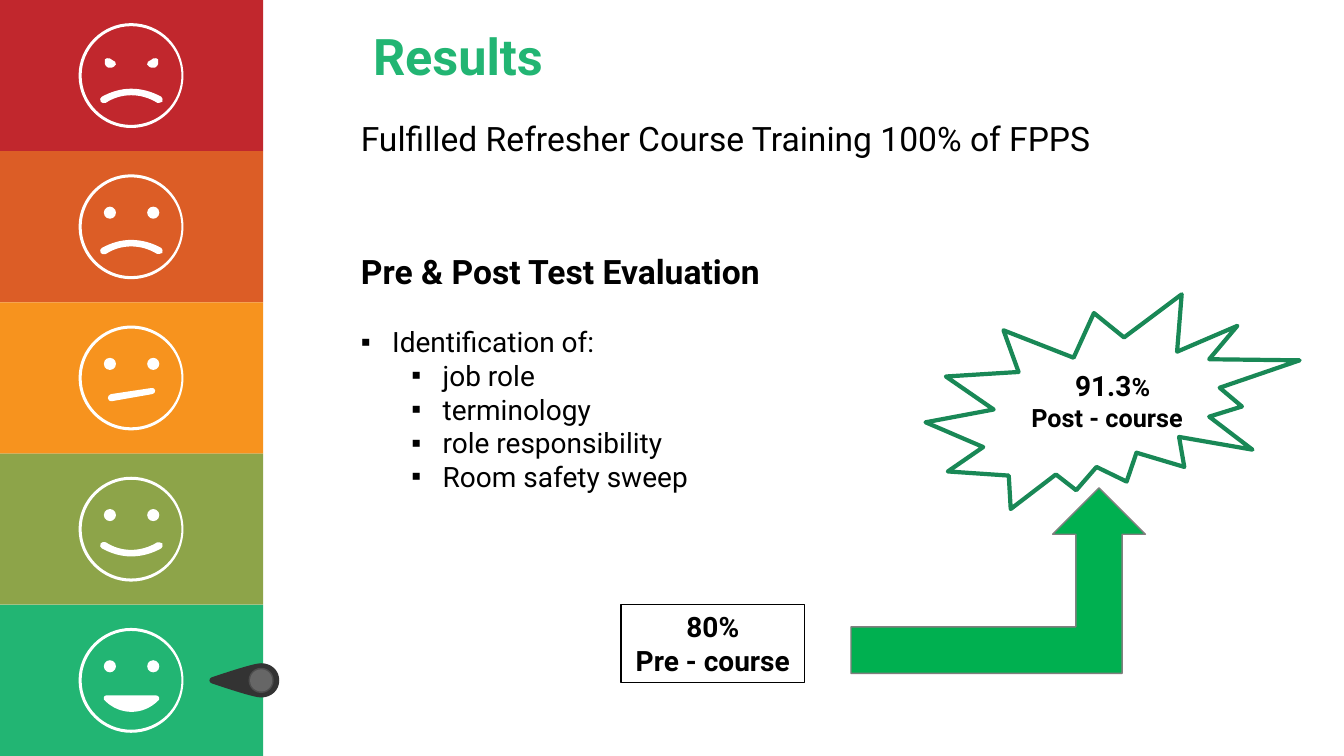
"""Build the Results slide: a mood scale beside course test scores."""
from dataclasses import dataclass

from lxml import etree
from pptx import Presentation
from pptx.dml.color import RGBColor
from pptx.enum.shapes import MSO_SHAPE
from pptx.enum.text import MSO_ANCHOR, MSO_AUTO_SIZE, PP_ALIGN
from pptx.oxml.ns import qn
from pptx.util import Inches, Pt

RECT, OVAL = MSO_SHAPE.RECTANGLE, MSO_SHAPE.OVAL
ARROW, BURST = MSO_SHAPE.BENT_UP_ARROW, MSO_SHAPE.EXPLOSION2
TOP = MSO_ANCHOR.TOP
LEFT, MIDDLE = PP_ALIGN.LEFT, PP_ALIGN.CENTER
FIXED, GROW = MSO_AUTO_SIZE.NONE, MSO_AUTO_SIZE.SHAPE_TO_FIT_TEXT


@dataclass(frozen=True)
class Theme:
    font: str = "Roboto"
    title: int = 36
    head: int = 24
    body: int = 20
    small: int = 18
    ink: str = "000000"
    white: str = "FFFFFF"
    green: str = "22B573"
    arrow: str = "00B050"
    edge: str = "817F7F"
    burst: str = "198856"
    knob: tuple = ("333333", "4D4D4D", "666666")
    moods: tuple = ("C1272D", "DC5D26", "F7931E", "8DA449", "22B573")


THEME = Theme()


def paint(shape, fill=None, line=None, width=1):
    shape.shadow.inherit = False
    if fill:
        shape.fill.solid()
        shape.fill.fore_color.rgb = RGBColor.from_string(fill)
    else:
        shape.fill.background()
    if line:
        shape.line.color.rgb = RGBColor.from_string(line)
        shape.line.width = Pt(width)
    else:
        shape.line.fill.background()


def style(para, size, bold=False, color=THEME.ink, align=LEFT):
    para.alignment = align
    para.space_before = para.space_after = Pt(0)
    for run in para.runs:
        run.font.name = THEME.font
        run.font.size = Pt(size)
        run.font.bold = bold
        run.font.color.rgb = RGBColor.from_string(color)


deck = Presentation()
deck.slide_width, deck.slide_height = Inches(13.33), Inches(7.5)
slide = deck.slides.add_slide(deck.slide_layouts[1])
shapes = slide.shapes

outer = [(1.3, 1.27), (1.02, 1.27), (0.78, 1.04), (0.78, 0.75), (0.78, 0.46), (1.02, 0.23),
         (1.3, 0.23), (1.59, 0.23), (1.82, 0.46), (1.82, 0.75), (1.82, 1.04), (1.59, 1.27),
         (1.3, 1.27)]
inner = [(1.3, 0.26), (1.03, 0.26), (0.81, 0.48), (0.81, 0.75), (0.81, 1.02), (1.03, 1.24),
         (1.3, 1.24), (1.58, 1.24), (1.8, 1.02), (1.8, 0.75), (1.8, 0.48), (1.58, 0.26),
         (1.3, 0.26)]
frown = [(1.58, 1.02), (1.57, 1.02), (1.57, 1.02), (1.56, 1.02),
         (1.4, 0.92), (1.2, 0.92), (1.05, 1.02), (1.03, 1.03), (1.01, 1.02), (1, 1.01),
         (0.99, 0.99), (0.99, 0.97), (1.01, 0.96), (1.1, 0.91), (1.2, 0.88), (1.3, 0.88),
         (1.41, 0.88), (1.51, 0.91), (1.6, 0.96), (1.61, 0.97), (1.62, 0.99), (1.61, 1.01),
         (1.6, 1.02), (1.59, 1.02), (1.58, 1.02)]
smile = [(x, 1.9 - y) for x, y in frown]
flat = [(1.1, 0.98), (1.09, 0.98), (1.07, 0.97), (1.07, 0.95), (1.07, 0.93), (1.08, 0.92),
        (1.1, 0.91), (1.5, 0.85), (1.5, 0.85), (1.5, 0.85), (1.52, 0.84), (1.53, 0.86),
        (1.54, 0.87), (1.54, 0.89), (1.53, 0.91), (1.51, 0.91), (1.11, 0.98), (1.11, 0.98),
        (1.11, 0.98), (1.11, 0.98), (1.1, 0.98), (1.1, 0.98)]
grin = [(1.55, 0.9), (1.05, 0.9), (1.05, 0.9), (1.05, 0.9), (1.03, 0.9), (1.02, 0.94),
        (1.04, 0.95), (1.19, 1.1), (1.42, 1.1), (1.57, 0.95), (1.59, 0.94), (1.58, 0.9),
        (1.55, 0.9)]
glare = [(1.15, 0.64), (1.13, 0.67), (1.1, 0.68), (1.07, 0.67), (1.04, 0.65), (1.03, 0.62),
         (1.04, 0.59), (1.05, 0.57), (1.07, 0.58), (1.09, 0.58), (1.1, 0.59), (1.11, 0.59),
         (1.12, 0.6), (1.13, 0.6), (1.16, 0.62), (1.15, 0.64)]
glares = [glare, [(2.61 - x, y) for x, y in glare]]
drop = [(2.59, 6.92), (2.69, 6.92), (2.77, 6.85), (2.77, 6.75), (2.77, 6.65), (2.69, 6.58),
        (2.59, 6.58), (2.52, 6.58), (2.25, 6.67), (2.1, 6.72), (2.07, 6.73), (2.07, 6.77),
        (2.1, 6.78), (2.25, 6.83), (2.52, 6.92), (2.59, 6.92)]

faces = [glares + [frown], [frown], [flat], [smile], [grin]]
groups = [shapes.add_group_shape().shapes for mood in THEME.moods]
knob = shapes.add_group_shape().shapes
blobs = [(knob, [drop], 0, THEME.knob[0])]
for row, (face, mood, parts) in enumerate(zip(groups, THEME.moods, faces)):
    top = row * 1.5
    band = face.add_shape(RECT, 0, Inches(top), Inches(2.61), Inches(1.5))
    paint(band, mood)
    if row > 0:
        for x in (1.03, 1.46):
            eye = face.add_shape(OVAL, Inches(x), Inches(top + 0.55), Inches(0.12), Inches(0.12))
            paint(eye, THEME.white)
    for loops in [[outer, inner]] + [[part] for part in parts]:
        blobs.append((face, loops, top, THEME.white))

for group, loops, down, fill in blobs:
    pen = None
    for loop in loops:
        dots = [(Inches(x), Inches(y + down)) for x, y in loop]
        if pen is None:
            pen = group.build_freeform(*dots[0], scale=1.0)
        else:
            pen.move_to(*dots[0])
        pen.add_line_segments(dots[1:], close=True)
    blob = pen.convert_to_shape()
    lines = list(blob._element.iter(qn("a:lnTo")))
    for k in range(0, len(lines), 3):
        curve = etree.Element(qn("a:cubicBezTo"))
        lines[k].addprevious(curve)
        for line in lines[k:k + 3]:
            curve.append(line[0])
            line.getparent().remove(line)
    paint(blob, fill)

for size, tone in zip((0.25, 0.22), THEME.knob[1:]):
    disc = knob.add_shape(OVAL, Inches(2.59 - size / 2), Inches(6.75 - size / 2),
                          Inches(size), Inches(size))
    paint(disc, tone)

title = shapes.title
title.left, title.top, title.width, title.height = map(Inches, (3.59, 0.2, 2.03, 0.71))
title.text_frame.text = "Results "
title.text_frame.vertical_anchor = TOP
title.text_frame.auto_size = GROW
title.text_frame.word_wrap = False
style(title.text_frame.paragraphs[0], THEME.title, True, THEME.green, MIDDLE)

lead = shapes.add_textbox(Inches(3.48), Inches(1.12), Inches(7.89), Inches(0.5)).text_frame
lead.word_wrap = True
lead.auto_size = GROW
lead.text = "Fulfilled Refresher Course Training 100% of FPPS"
style(lead.paragraphs[0], THEME.head)

body = shapes.placeholders[1]
body.left, body.top, body.width, body.height = map(Inches, (3.48, 2.44, 5.63, 2.86))
body.text_frame.text = "\n".join((
    "Pre & Post Test Evaluation", "Identification of:", "job role", "terminology",
    "role responsibility", "Room safety sweep"))
body.text_frame.auto_size = FIXED
for row, para in enumerate(body.text_frame.paragraphs):
    head = row == 0
    para.level = int(row > 1)
    style(para, THEME.head if head else THEME.body, head)
    if head:
        para.space_after = Pt(24)
    props = para._p.get_or_add_pPr()
    props.set("marL", str(0 if head else Inches(0.81 if row > 1 else 0.31)))
    props.set("indent", str(0 if head else Inches(-0.31)))
    if head:
        etree.SubElement(props, qn("a:buNone"))
    else:
        etree.SubElement(props, qn("a:buChar")).set("char", "▪")

arrow = shapes.add_shape(ARROW, Inches(8.44), Inches(4.84), Inches(2.92), Inches(1.84))
paint(arrow, THEME.arrow, THEME.edge)

before = shapes.add_shape(RECT, Inches(6.16), Inches(6), Inches(1.82), Inches(0.77))
paint(before, line=THEME.ink)
after = shapes.add_textbox(Inches(10.13), Inches(3.61), Inches(1.81), Inches(0.74))
for box, score, label, size, align in (
        (before, "80%", "Pre - course", THEME.body, MIDDLE),
        (after, "91.3", "Post - course", THEME.small, LEFT)):
    frame = box.text_frame
    frame.word_wrap = False
    frame.auto_size = GROW
    frame.text = score + "\n" + label
    style(frame.paragraphs[0], THEME.body, True, align=MIDDLE)
    style(frame.paragraphs[1], size, True, align=align)
first = after.text_frame.paragraphs[0]
sign = first.add_run()
sign.text = "%"
style(first, THEME.body, True, align=MIDDLE)
sign.font.size = Pt(THEME.small)

burst = shapes.add_shape(BURST, Inches(9.18), Inches(2.92), Inches(3.71), Inches(2.13))
paint(burst, line=THEME.burst, width=3)

deck.save("out.pptx")
